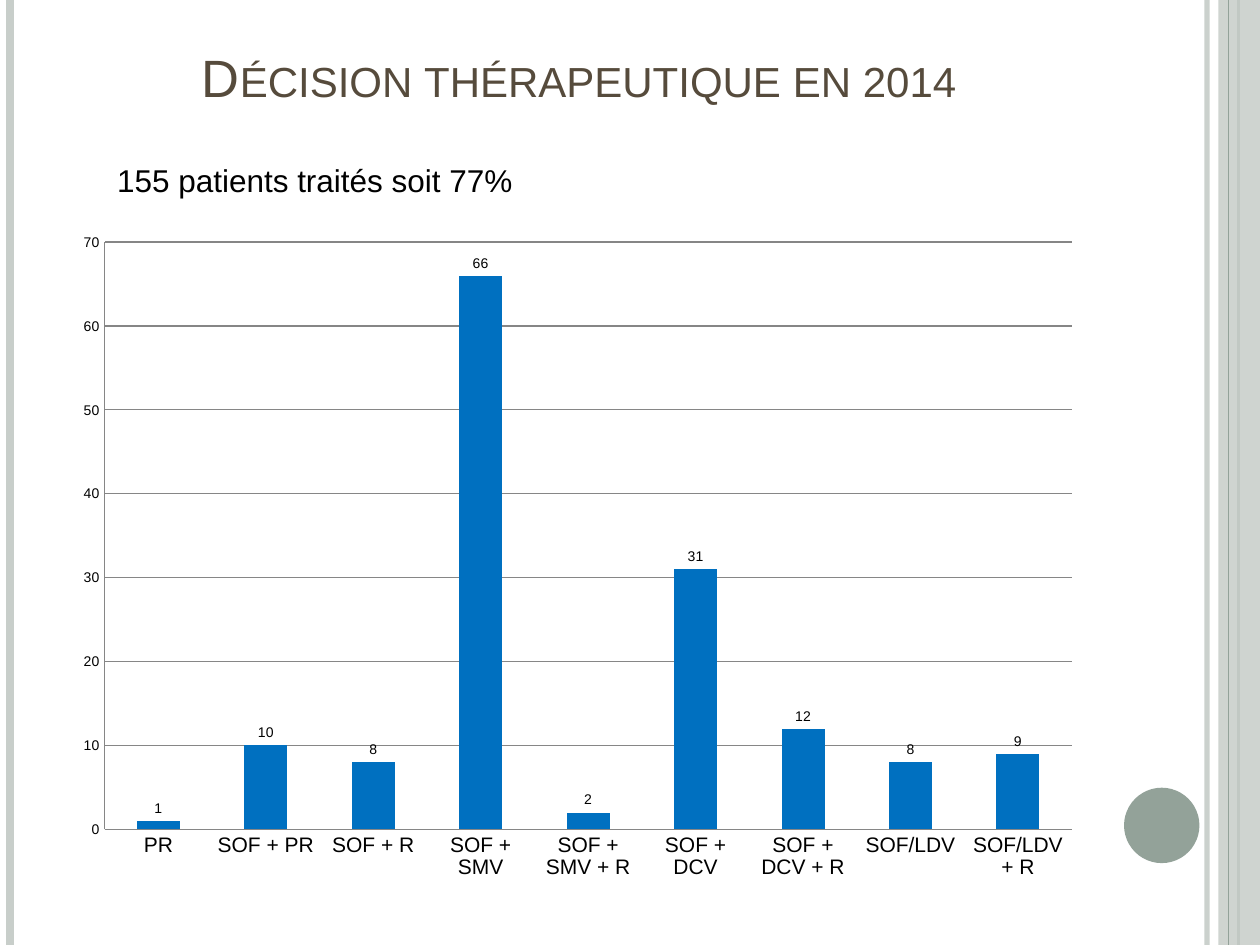
from lxml import etree
from pptx import Presentation
from pptx.chart.data import CategoryChartData
from pptx.dml.color import RGBColor
from pptx.enum import chart as ch, shapes, text
from pptx.oxml.ns import qn
from pptx.util import Cm, Pt

# Content
TITLE = "Décision thérapeutique en 2014"
SUBTITLE = "155 patients traités soit 77%"
TREATMENTS = [
    ("PR", 1), ("SOF + PR", 10), ("SOF + R", 8), ("SOF + SMV", 66),
    ("SOF + SMV + R", 2), ("SOF + DCV", 31), ("SOF + DCV + R", 12),
    ("SOF/LDV", 8), ("SOF/LDV + R", 9),
]


class Theme:
    font = "Arial"
    title, ink, bar = "564B3C", "000000", "0070C0"
    pale, sage, grid = "C8CECA", "93A299", "868686"
    title_size, body_size, category_size, chart_size = 30, 18, 12, 8


WIDTH, HEIGHT = 25.4, 19.05
BAND = (24.56, 0, 0.84, HEIGHT)
DOT = (22.66, 15.88, 1.52, 1.52)
# Vertical rules: x, colour, width in points, opacity in percent
BACK_RULES = [(24.33, Theme.pale, 3, 93), (0.2, Theme.pale, 4.5, 100),
              (24.97, Theme.sage, 1.5, 100)]
FRONT_RULES = [(24.77, Theme.sage, 0.75, 100)]


def rgb(value):
    return RGBColor.from_string(value)


def set_opacity(sp, percent):
    color = next(sp._element.spPr.iter(qn("a:srgbClr")))
    etree.SubElement(color, qn("a:alpha"), val=str(percent * 1000))


def add_rules(slide, rules):
    for x, color, width, opacity in rules:
        line = slide.shapes.add_connector(
            shapes.MSO_CONNECTOR.STRAIGHT, Cm(x), 0, Cm(x), Cm(HEIGHT))
        line.line.color.rgb = rgb(color)
        line.line.width = Pt(width)
        if opacity < 100:
            set_opacity(line, opacity)
        etree.SubElement(line._element.spPr, qn("a:effectLst"))


def add_filled(slide, kind, box, color):
    sp = slide.shapes.add_shape(kind, *map(Cm, box))
    sp.shadow.inherit = False
    sp.fill.solid()
    sp.fill.fore_color.rgb = rgb(color)
    sp.line.fill.background()
    return sp


def write(sp, content, size, color=Theme.ink, align=text.PP_ALIGN.LEFT,
          anchor=text.MSO_ANCHOR.TOP, small_caps=False):
    tf = sp.text_frame
    tf.word_wrap = True
    tf.vertical_anchor = anchor
    p = tf.paragraphs[0]
    p.alignment = align
    r = p.add_run()
    r.text = content
    r.font.name, r.font.size = Theme.font, Pt(size)
    r.font.color.rgb = rgb(color)
    if small_caps:
        r._r.get_or_add_rPr().set("cap", "small")


def add_treatment_chart(slide, box):
    data = CategoryChartData()
    data.categories = [name for name, _ in TREATMENTS]
    data.add_series("Patients", [count for _, count in TREATMENTS])
    chart = slide.shapes.add_chart(
        ch.XL_CHART_TYPE.COLUMN_CLUSTERED, *map(Cm, box), data).chart
    chart.has_legend = chart.has_title = False
    chart.font.name, chart.font.size = Theme.font, Pt(Theme.chart_size)
    chart.font.color.rgb = rgb(Theme.ink)

    # Axes
    for axis in (chart.category_axis, chart.value_axis):
        axis.major_tick_mark = axis.minor_tick_mark = ch.XL_TICK_MARK.NONE
        axis.format.line.color.rgb = rgb(Theme.grid)
    chart.category_axis.tick_labels.font.size = Pt(Theme.category_size)
    values = chart.value_axis
    values.minimum_scale, values.maximum_scale, values.major_unit = 0, 70, 10
    values.major_gridlines.format.line.color.rgb = rgb(Theme.grid)

    # Bars and value labels
    plot = chart.plots[0]
    plot.gap_width = 150
    plot.vary_by_categories = False
    fill = plot.series[0].format.fill
    fill.solid()
    fill.fore_color.rgb = rgb(Theme.bar)
    plot.has_data_labels = True
    plot.data_labels.show_value = True
    plot.data_labels.position = ch.XL_LABEL_POSITION.OUTSIDE_END


def main():
    prs = Presentation()
    prs.slide_width, prs.slide_height = Cm(WIDTH), Cm(HEIGHT)
    slide = prs.slides.add_slide(prs.slide_layouts[5])

    # Side decoration
    add_rules(slide, BACK_RULES)
    band = add_filled(slide, shapes.MSO_SHAPE.RECTANGLE, BAND, Theme.pale)
    set_opacity(band, 87)
    add_rules(slide, FRONT_RULES)
    add_filled(slide, shapes.MSO_SHAPE.OVAL, DOT, Theme.sage)

    # Title and subtitle
    title = slide.shapes.title
    title.left, title.top, title.width, title.height = map(
        Cm, (1.3, 0.74, 20.75, 1.57))
    write(title, TITLE, Theme.title_size, Theme.title, text.PP_ALIGN.CENTER,
          text.MSO_ANCHOR.BOTTOM, small_caps=True)
    subtitle = slide.shapes.add_textbox(*map(Cm, (2.11, 3.12, 9.6, 1.8)))
    write(subtitle, SUBTITLE, Theme.body_size)

    # Chart
    add_treatment_chart(slide, (1.27, 4.45, 20.75, 13.54))
    prs.save("out.pptx")


if __name__ == "__main__":
    main()
